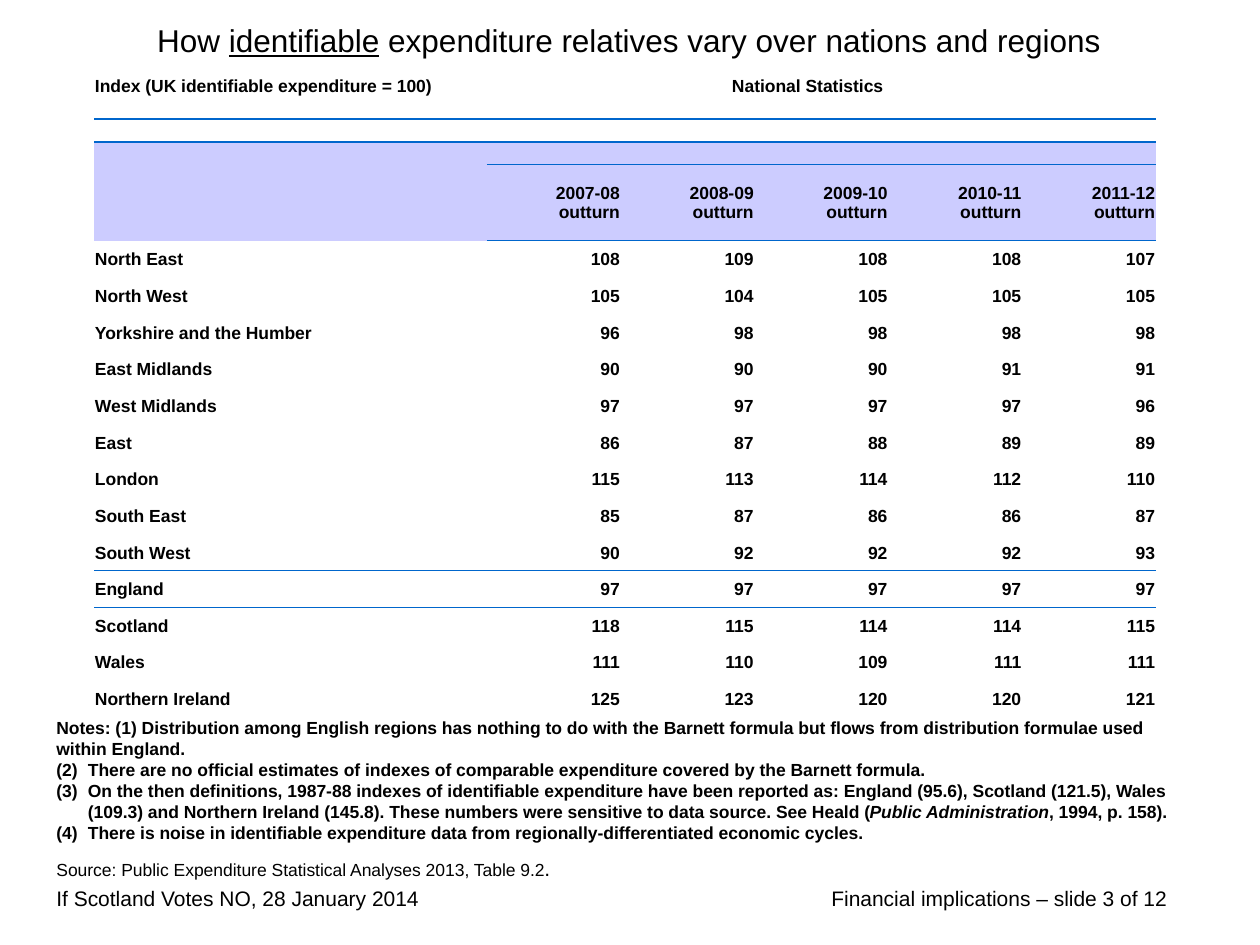
from dataclasses import dataclass, field

from pptx import Presentation, util as u
from pptx.dml.color import RGBColor
from pptx.enum import text
from pptx.oxml import ns
from lxml import etree

PX = u.Inches(1) / 126
BLACK, RULE, BAND = "000000", "0066CC", "CCCCFF"
PLAIN_STYLE = "{2D5ABB26-0587-4C30-8999-92F81FD0307C}"
LEFT, CENTER, RIGHT = text.PP_ALIGN.LEFT, text.PP_ALIGN.CENTER, text.PP_ALIGN.RIGHT
TOP, MIDDLE = text.MSO_ANCHOR.TOP, text.MSO_ANCHOR.MIDDLE


@dataclass
class Run:
    words: str
    style: dict = field(default_factory=dict)


@dataclass
class Para:
    runs: list[Run]
    numbered: bool = False


@dataclass
class Block:
    left: int
    top: int
    width: int
    height: int
    paras: list[Para]
    style: dict
    align: text.PP_ALIGN = LEFT
    anchor: text.MSO_ANCHOR = TOP


NOTE = {"size": u.Pt(10), "bold": True}
FOOTER = {"size": u.Pt(12)}
BLOCKS = [
    Block(819, 879, 388, 38, [Para([Run("Financial implications – slide 3 of 12")])], FOOTER),
    Block(44, 879, 442, 66, [Para([Run("If Scotland Votes NO, 28 January 2014")])], FOOTER),
    Block(64, 0, 1130, 79, [Para([
        Run("How "), Run("identifiable", {"underline": True}),
        Run(" expenditure relatives vary over nations and regions")])],
        {"size": u.Pt(18)}, CENTER, MIDDLE),
    Block(44, 849, 1142, 38, [Para([
        Run("Source: Public Expenditure Statistical Analyses 2013, Table 9.2"),
        Run(".", {"size": u.Pt(12)})])], {"size": u.Pt(10)}),
    Block(44, 711, 1152, 140, [
        Para([Run("Notes: (1) Distribution among English regions has nothing to do with the "
                  "Barnett formula but flows from distribution formulae used within England.")]),
        Para([Run("There are no official estimates of indexes of comparable expenditure "
                  "covered by the Barnett formula.")], True),
        Para([Run("On the then definitions, 1987-88 indexes of identifiable expenditure have "
                  "been reported as: England (95.6), Scotland (121.5), Wales (109.3) and "
                  "Northern Ireland (145.8). These numbers were sensitive to data source. "
                  "See Heald ("),
              Run("Public Administration", {"italic": True}), Run(", 1994, p. 158).")], True),
        Para([Run("There is noise in identifiable expenditure data from "
                  "regionally-differentiated economic cycles.")], True)], NOTE),
]

CAPTION = "Index (UK identifiable expenditure = 100)\tNational Statistics"
YEARS = ["2007-08", "2008-09", "2009-10", "2010-11", "2011-12"]
INDEXES = [
    ("North East", 108, 109, 108, 108, 107),
    ("North West", 105, 104, 105, 105, 105),
    ("Yorkshire and the Humber", 96, 98, 98, 98, 98),
    ("East Midlands", 90, 90, 90, 91, 91),
    ("West Midlands", 97, 97, 97, 97, 96),
    ("East", 86, 87, 88, 89, 89),
    ("London", 115, 113, 114, 112, 110),
    ("South East", 85, 87, 86, 86, 87),
    ("South West", 90, 92, 92, 92, 93),
    ("England", 97, 97, 97, 97, 97),
    ("Scotland", 118, 115, 114, 114, 115),
    ("Wales", 111, 110, 109, 111, 111),
    ("Northern Ireland", 125, 123, 120, 120, 121),
]
HEAD_ROWS = [43, 23, 22, 77]
ENGLAND = len(HEAD_ROWS) + [row[0] for row in INDEXES].index("England")
# (row, first column) -> (side, width in points)
RULES = {(0, 0): ("lnB", 1), (1, 0): ("lnT", 1),
         (2, 1): ("lnB", 0.5), (3, 1): ("lnT", 0.5),
         (ENGLAND - 1, 0): ("lnB", 0.5), (ENGLAND, 0): ("lnT", 0.5)}


def px(length: float) -> int:
    return round(length * PX)


def rgb(colour: str) -> RGBColor:
    return RGBColor.from_string(colour)


def even(total: int, count: int) -> list[float]:
    return [total / count] * count


def style_run(run, style: dict) -> None:
    for name, value in ({"name": "Arial"} | style).items():
        setattr(run.font, name, value)
    run.font.color.rgb = rgb(BLACK)


def number(paragraph) -> None:
    """Hang the paragraph under an automatic number, counting on from (2)."""
    props = paragraph._p.get_or_add_pPr()
    props.set("marL", str(u.Inches(0.25)))
    props.set("indent", str(-u.Inches(0.25)))
    etree.SubElement(props, ns.qn("a:buFont"), typeface="+mj-lt")
    etree.SubElement(props, ns.qn("a:buAutoNum"), type="arabicParenBoth", startAt="2")


def draw_block(slide, block: Block) -> None:
    box = slide.shapes.add_textbox(*map(px, (block.left, block.top, block.width, block.height)))
    frame = box.text_frame
    frame.word_wrap, frame.vertical_anchor = True, block.anchor
    for i, para in enumerate(block.paras):
        paragraph = frame.add_paragraph() if i else frame.paragraphs[0]
        paragraph.alignment = block.align
        if para.numbered:
            number(paragraph)
        for part in para.runs:
            run = paragraph.add_run()
            run.text = part.words
            style_run(run, block.style | part.style)


def fill_cell(cell, words: str, align: text.PP_ALIGN, colour: str | None) -> None:
    for side in ("left", "right", "top"):
        setattr(cell, f"margin_{side}", px(1))
    cell.margin_bottom = 0
    cell.vertical_anchor = MIDDLE
    if colour:
        cell.fill.solid()
        cell.fill.fore_color.rgb = rgb(colour)
    else:
        cell.fill.background()
    paragraph = cell.text_frame.paragraphs[0]
    paragraph.text, paragraph.alignment = words, align
    for run in paragraph.runs:
        style_run(run, NOTE)
    for line_break in paragraph._p.findall(ns.qn("a:br")):
        etree.SubElement(line_break, ns.qn("a:rPr"), sz="1000")
    if not words:
        etree.SubElement(paragraph._p, ns.qn("a:endParaRPr"), sz="800")


def rule_cell(cell, side: str, points: float) -> None:
    line = etree.Element(ns.qn(f"a:{side}"), w=str(u.Pt(points)))
    paint = etree.SubElement(line, ns.qn("a:solidFill"))
    etree.SubElement(paint, ns.qn("a:srgbClr"), val=RULE)
    cell._tc.get_or_add_tcPr().insert(0, line)


def draw_table(slide) -> None:
    widths = [393] + even(669, len(YEARS))
    heights = HEAD_ROWS + even(477, len(INDEXES))
    blank = [""] * len(widths)
    rows = [[CAPTION] + blank[1:], blank, blank,
            [""] + [f"{year}\voutturn" for year in YEARS], *INDEXES]
    fills = {0: "FFFFFF", 2: BAND, 3: BAND}
    table = slide.shapes.add_table(len(rows), len(widths), px(94), px(76),
                                   px(sum(widths)), px(sum(heights))).table
    table.first_row = table.horz_banding = False
    table._tbl.tblPr.find(ns.qn("a:tableStyleId")).text = PLAIN_STYLE
    for column, width in zip(table.columns, widths):
        column.width = px(width)
    for r, (row, height) in enumerate(zip(rows, heights)):
        table.rows[r].height = px(height)
        for c, value in enumerate(row):
            fill_cell(table.cell(r, c), str(value), RIGHT if c else LEFT, fills.get(r))
    for (r, first), (side, points) in RULES.items():
        for c in range(first, len(widths)):
            rule_cell(table.cell(r, c), side, points)
    caption = table.cell(0, 0)
    caption.merge(table.cell(0, 5))
    table.cell(2, 1).merge(table.cell(2, 5))
    caption.vertical_anchor = TOP
    tabs = etree.SubElement(caption.text_frame.paragraphs[0]._p.get_or_add_pPr(),
                            ns.qn("a:tabLst"))
    etree.SubElement(tabs, ns.qn("a:tab"), pos=str(px(637)), algn="l")


def main() -> None:
    deck = Presentation()
    deck.slide_width, deck.slide_height = u.Inches(10), u.Inches(7.5)
    slide = deck.slides.add_slide(deck.slide_layouts[6])
    for block in BLOCKS:
        draw_block(slide, block)
    draw_table(slide)
    deck.save("out.pptx")


if __name__ == "__main__":
    main()
